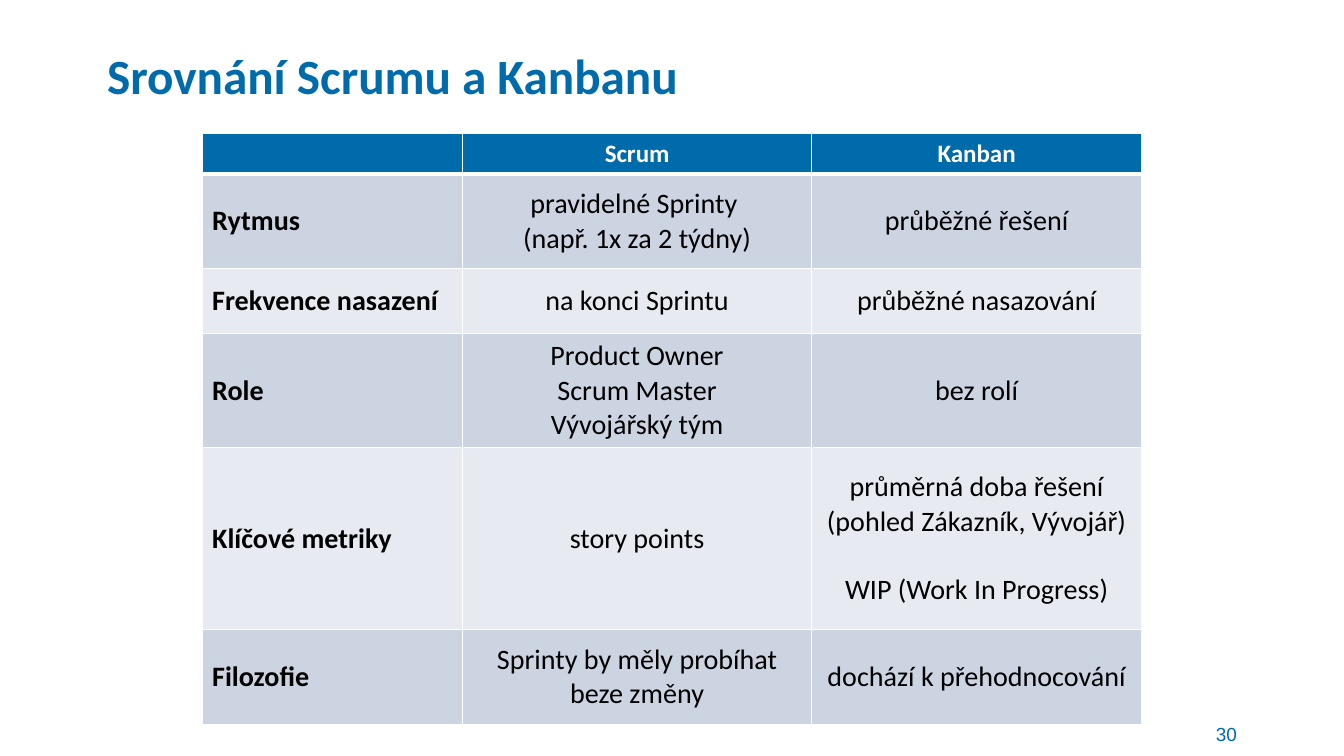
from lxml.etree import SubElement
from pptx import Presentation
from pptx.dml.color import RGBColor
from pptx.enum.text import MSO_ANCHOR as Anchor, PP_ALIGN as Align
from pptx.oxml.ns import qn
from pptx.util import Inches, Pt

BLUE, WHITE, BLACK = "006BAB", "FFFFFF", "000000"
BANDS = ["E7EBF1", "CCD4E2"]


def style(paragraph, size, color, bold=False, align=Align.LEFT, name="Calibri"):
    paragraph.alignment = align
    font = paragraph.font
    font.name, font.size, font.bold = name, Pt(size), bold
    font.color.rgb = RGBColor.from_string(color)


def add_label(text, left, top, width, height, anchor):
    frame = slide.shapes.add_textbox(
        Inches(left), Inches(top), Inches(width), Inches(height)).text_frame
    frame.margin_left = frame.margin_right = frame.margin_top = frame.margin_bottom = 0
    frame.word_wrap = True
    frame.vertical_anchor = anchor
    frame.text = text
    return frame.paragraphs[0]


prs = Presentation()
prs.slide_width, prs.slide_height = Inches(13.3), Inches(7.48)
slide = prs.slides.add_slide(prs.slide_layouts[6])

title = add_label("Srovnání Scrumu a Kanbanu", 1.06, 0.21, 11.17, 0.82, Anchor.BOTTOM)
style(title, 35.1, BLUE, bold=True)
page_number = add_label("30", 11.77, 7.14, 0.47, 0.24, Anchor.MIDDLE)
style(page_number, 13.5, BLUE, align=Align.RIGHT, name="Arial")

comparison = [
    ("", "Scrum", "Kanban"),
    ("Rytmus", "pravidelné Sprinty \n(např. 1x za 2 týdny)", "průběžné řešení"),
    ("Frekvence nasazení", "na konci Sprintu", "průběžné nasazování"),
    ("Role", "Product Owner\nScrum Master\nVývojářský tým", "bez rolí"),
    ("Klíčové metriky", "story points",
     "průměrná doba řešení (pohled Zákazník, Vývojář)\n\nWIP (Work In Progress)"),
    ("Filozofie", "Sprinty by měly probíhat beze změny", "dochází k přehodnocování"),
]
column_widths = [2.58, 3.45, 3.27]
row_heights = [0.4, 0.94, 0.64, 1.13, 1.8, 0.94]

table = slide.shapes.add_table(
    len(row_heights), len(column_widths), Inches(2), Inches(1.32),
    Inches(sum(column_widths)), Inches(sum(row_heights))).table
for column, width in zip(table.columns, column_widths):
    column.width = Inches(width)
for row, height in zip(table.rows, row_heights):
    row.height = Inches(height)

for r, entries in enumerate(comparison):
    header = r == 0
    for c, entry in enumerate(entries):
        cell = table.cell(r, c)
        cell.vertical_anchor = Anchor.TOP if header else Anchor.MIDDLE
        properties = cell._tc.get_or_add_tcPr()
        for side in "LRTB":
            thick = (header and side == "B") or (r == 1 and side == "T")
            border = SubElement(properties, qn(f"a:ln{side}"), w=str(Pt(3 if thick else 1)))
            SubElement(SubElement(border, qn("a:solidFill")), qn("a:srgbClr"), val=WHITE)
        cell.fill.solid()
        cell.fill.fore_color.rgb = RGBColor.from_string(BLUE if header else BANDS[r % 2])

        for i, block in enumerate(entry.split("\n\n")):
            frame = cell.text_frame
            paragraph = frame.add_paragraph() if i else frame.paragraphs[0]
            paragraph.text = block
            if i:
                paragraph.space_before = Pt(24.5)
            style(paragraph, 17.8 if header else 20, WHITE if header else BLACK,
                  bold=header or c == 0, align=Align.CENTER if c else Align.LEFT)

prs.save("out.pptx")
